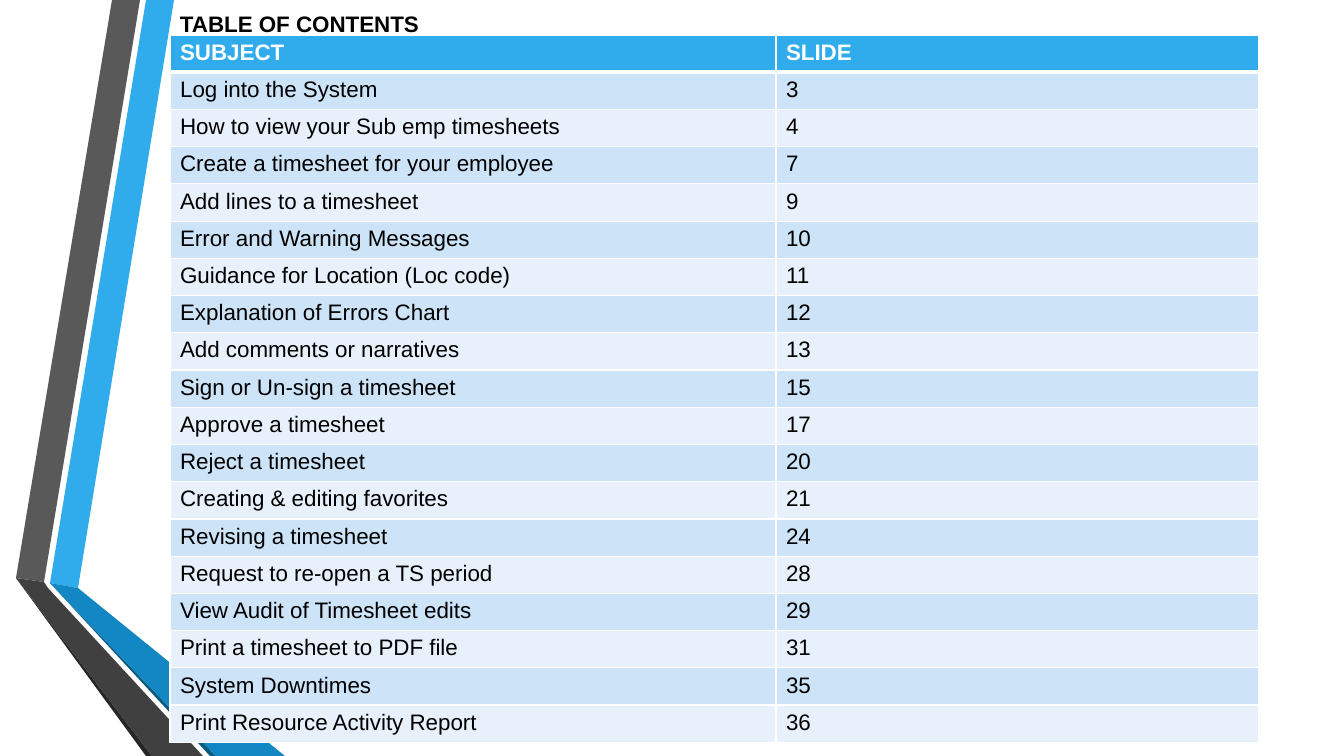
from lxml import etree
from pptx import Presentation
from pptx.dml.color import RGBColor
from pptx.enum.text import MSO_ANCHOR, MSO_AUTO_SIZE, PP_ALIGN
from pptx.oxml.ns import qn
from pptx.util import Emu, Pt

LEFT = PP_ALIGN.LEFT
TOP = MSO_ANCHOR.TOP
NO_AUTOFIT = MSO_AUTO_SIZE.NONE

BLACK = RGBColor(0x00, 0x00, 0x00)
WHITE = RGBColor(0xFF, 0xFF, 0xFF)
BLUE = RGBColor(0x30, 0xAC, 0xEC)
MID_BLUE = RGBColor(0x12, 0x87, 0xC3)
DEEP_BLUE = RGBColor(0x0C, 0x5A, 0x82)
GREY = RGBColor(0x59, 0x59, 0x59)
DARK_GREY = RGBColor(0x40, 0x40, 0x40)
CHARCOAL = RGBColor(0x26, 0x26, 0x26)
BANDS = (RGBColor(0xCD, 0xE3, 0xF8), RGBColor(0xE8, 0xF1, 0xFB))

SCALE = 914400 / 100.8
TITLE_ONLY = 5

RIBBONS = [
    (BLUE, [(50, 583), (78, 588), (174, 0), (146, 0)]),
    (GREY, [(140, 0), (112, 0), (16, 578), (44, 582)]),
    (CHARCOAL, [(16, 578), (146, 756), (152, 756)]),
    (DEEP_BLUE, [(50, 583), (210, 756), (216, 756)]),
    (MID_BLUE, [(50, 583), (216, 756), (285, 756), (78, 588)]),
    (DARK_GREY, [(203, 756), (48, 588), (44, 582), (16, 578), (152, 756)]),
]

CONTENTS = [
    ("SUBJECT", "SLIDE"),
    ("Log into the System", "3"),
    ("How to view your Sub emp timesheets", "4"),
    ("Create a timesheet for your employee", "7"),
    ("Add lines to a timesheet", "9"),
    ("Error and Warning Messages", "10"),
    ("Guidance for Location (Loc code)", "11"),
    ("Explanation of Errors Chart", "12"),
    ("Add comments or narratives", "13"),
    ("Sign or Un-sign a timesheet", "15"),
    ("Approve a timesheet", "17"),
    ("Reject a timesheet", "20"),
    ("Creating & editing favorites", "21"),
    ("Revising a timesheet", "24"),
    ("Request to re-open a TS period", "28"),
    ("View Audit of Timesheet edits", "29"),
    ("Print a timesheet to PDF file", "31"),
    ("System Downtimes", "35"),
    ("Print Resource Activity Report", "36"),
]


def px(n):
    return Emu(round(n * SCALE))


class SlideBuilder:
    """Holds the text style and the slide being built."""

    font = "Arial"
    size = Pt(16)

    def __init__(self, slide):
        self.slide = slide

    def run(self, p, text, color, bold=False):
        r = p.add_run()
        r.text = text
        r.font.name = self.font
        r.font.size = self.size
        r.font.bold = bold
        r.font.color.rgb = color

    def title(self, text, left, top, width, height, inset_left, inset_top):
        sp = self.slide.shapes.title
        sp.left, sp.top, sp.width, sp.height = map(px, (left, top, width, height))
        tf = sp.text_frame
        tf.word_wrap = True
        tf.auto_size = NO_AUTOFIT
        tf.vertical_anchor = TOP
        tf.margin_left, tf.margin_top = px(inset_left), px(inset_top)
        p = tf.paragraphs[0]
        p.alignment = LEFT
        self.run(p, text, BLACK, bold=True)

    def polygon(self, points, color):
        builder = self.slide.shapes.build_freeform(*points[0], scale=SCALE)
        builder.add_line_segments(points[1:], close=True)
        sp = builder.convert_to_shape()
        sp.shadow.inherit = False
        sp.fill.solid()
        sp.fill.fore_color.rgb = color
        sp.line.fill.background()

    def borders(self, cell, top, bottom):
        """Draw white cell borders; top and bottom widths are in points."""
        tc_pr = cell._tc.get_or_add_tcPr()
        for side, width in (("L", 1), ("R", 1), ("T", top), ("B", bottom)):
            ln = etree.SubElement(tc_pr, qn(f"a:ln{side}"), w=str(Pt(width)))
            fill = etree.SubElement(ln, qn("a:solidFill"))
            etree.SubElement(fill, qn("a:srgbClr"), val=str(WHITE))

    def table(self, rows, left, top, col_widths, height):
        frame = self.slide.shapes.add_table(
            len(rows), len(col_widths),
            px(left), px(top), px(sum(col_widths)), px(height))
        table = frame.table
        for column, width in zip(table.columns, col_widths):
            column.width = px(width)
        for i, row in enumerate(rows):
            header = i == 0
            for j, text in enumerate(row):
                cell = table.cell(i, j)
                self.borders(cell, 3 if i == 1 else 1, 3 if header else 1)
                cell.fill.solid()
                cell.fill.fore_color.rgb = BLUE if header else BANDS[(i - 1) % 2]
                self.run(cell.text_frame.paragraphs[0], text,
                         WHITE if header else BLACK, bold=header)


def main():
    prs = Presentation()
    prs.slide_width, prs.slide_height = px(1344), px(756)
    s = SlideBuilder(prs.slides.add_slide(prs.slide_layouts[TITLE_ONLY]))
    for color, points in RIBBONS:
        s.polygon(points, color)
    s.title("TABLE OF CONTENTS", 102, 0, 866, 142, inset_left=78, inset_top=10)
    s.table(CONTENTS, 170, 35, (606, 483), 708)
    prs.save("out.pptx")


if __name__ == "__main__":
    main()
